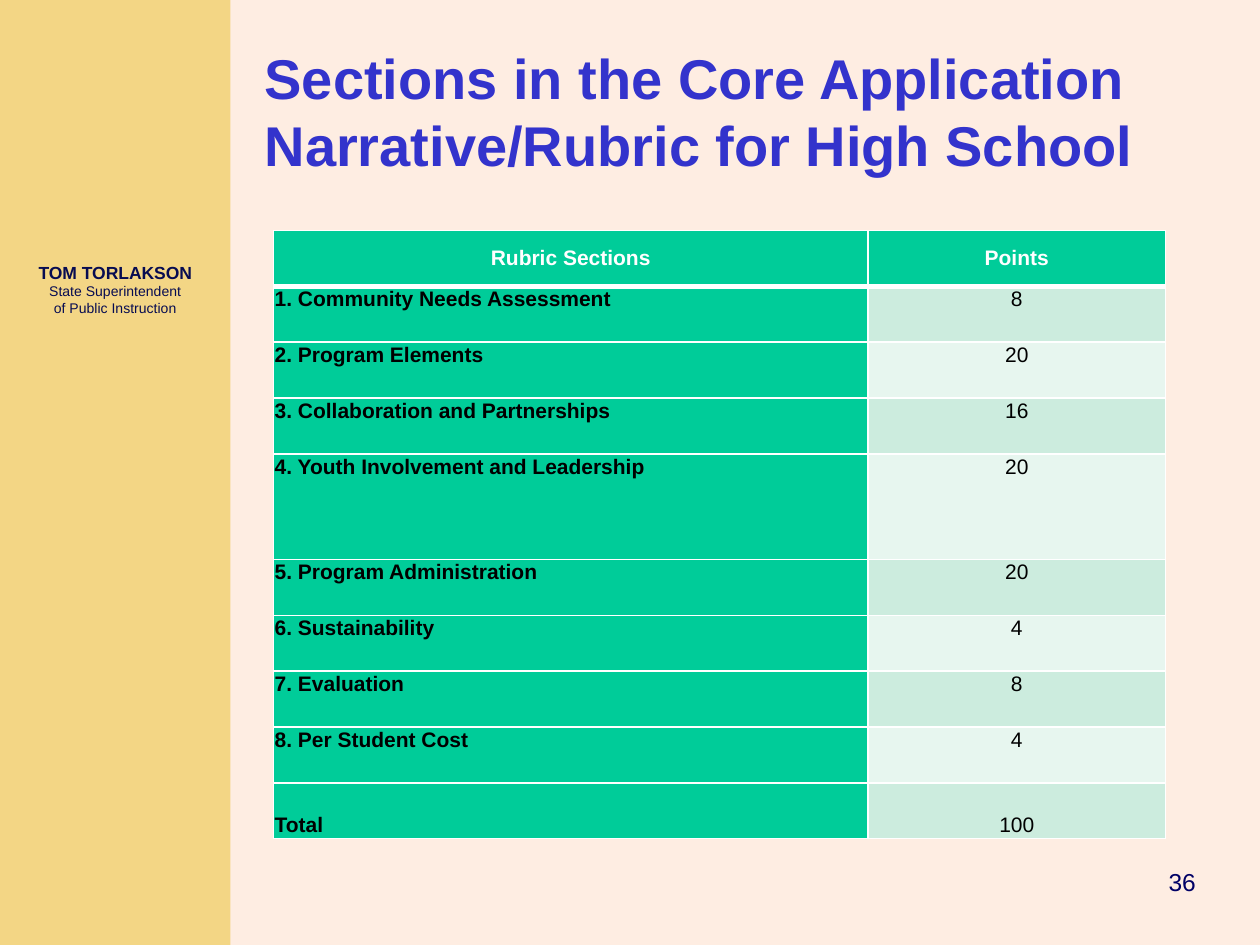
from dataclasses import dataclass

from lxml.etree import SubElement
from pptx import Presentation
from pptx.dml.color import RGBColor
from pptx.enum.shapes import MSO_SHAPE
from pptx.enum.text import MSO_ANCHOR as Anchor, MSO_AUTO_SIZE as Fit, PP_ALIGN as Align
from pptx.oxml.ns import qn
from pptx.util import Inches, Pt

HUES = {
    "page": "FEEDE2", "band": "F3D685", "navy": "070C51", "number": "000066",
    "title": "3333CC", "green": "00CC99", "odd": "CCECDE", "even": "E7F6EF",
    "white": "FFFFFF", "black": "000000",
}
FONT = "Arial"
ROW, TALL = 0.443, 0.84
WIDTHS = (4.72, 2.36)


@dataclass
class Box:
    left: float
    top: float
    width: float
    height: float

    def dims(self) -> tuple:
        return tuple(map(Inches, (self.left, self.top, self.width, self.height)))


@dataclass
class Entry:
    name: str
    points: str
    height: float = ROW
    anchor: Anchor = Anchor.TOP


ENTRIES = [
    Entry("Rubric Sections", "Points", anchor=Anchor.MIDDLE),
    Entry("1. Community Needs Assessment", "8"),
    Entry("2. Program Elements", "20"),
    Entry("3. Collaboration and Partnerships", "16"),
    Entry("4. Youth Involvement and Leadership", "20", TALL),
    Entry("5. Program Administration", "20"),
    Entry("6. Sustainability", "4"),
    Entry("7. Evaluation", "8"),
    Entry("8. Per Student Cost", "4"),
    Entry("Total", "100", anchor=Anchor.BOTTOM),
]


def tint(key: str) -> RGBColor:
    return RGBColor.from_string(HUES[key])


def add_run(para, text: str, size: float, hue: str, bold: bool = False) -> None:
    run = para.add_run()
    run.text = text
    font = run.font
    font.name, font.size, font.bold = FONT, Pt(size), bold
    font.color.rgb = tint(hue)


def add_panel(slide, box: Box, hue: str) -> None:
    panel = slide.shapes.add_shape(MSO_SHAPE.RECTANGLE, *box.dims())
    panel.shadow.inherit = False
    panel.fill.solid()
    panel.fill.fore_color.rgb = tint(hue)
    panel.line.fill.background()


def add_text(slide, box: Box, align: Align, anchor: Anchor = Anchor.TOP):
    """Add an empty text box and return its first paragraph."""
    frame = slide.shapes.add_textbox(*box.dims()).text_frame
    frame.word_wrap = True
    frame.vertical_anchor = anchor
    para = frame.paragraphs[0]
    para.alignment = align
    return para


def add_edges(cell, top: float, bottom: float) -> None:
    """Draw white cell borders; side borders are one point wide."""
    props = cell._tc.get_or_add_tcPr()
    sides = {"L": 1, "R": 1, "T": top, "B": bottom}
    for spot, (side, width) in enumerate(sides.items()):
        line = SubElement(props, qn(f"a:ln{side}"), w=str(Pt(width)))
        fill = SubElement(line, qn("a:solidFill"))
        SubElement(fill, qn("a:srgbClr"), val=HUES["white"])
        props.insert(spot, line)


def fill_cell(cell, entry: Entry, row: int, col: int) -> None:
    head, label = row == 0, col == 0
    cell.margin_left = cell.margin_right = Inches(0.01)
    cell.margin_top = cell.margin_bottom = Inches(0.01)
    cell.vertical_anchor = entry.anchor
    cell.fill.solid()
    shade = "odd" if row % 2 else "even"
    cell.fill.fore_color.rgb = tint("green" if head or label else shade)
    add_edges(cell, 3 if row == 1 else 1, 3 if head else 1)
    para = cell.text_frame.paragraphs[0]
    para.alignment = Align.LEFT if label and not head else Align.CENTER
    add_run(para, entry.name if label else entry.points, 12,
            "white" if head else "black", head or label)


def add_rubric(slide, left: float, top: float) -> None:
    box = Box(left, top, sum(WIDTHS), sum(entry.height for entry in ENTRIES))
    table = slide.shapes.add_table(len(ENTRIES), len(WIDTHS), *box.dims()).table
    for col, width in enumerate(WIDTHS):
        table.columns[col].width = Inches(width)
    for row, entry in enumerate(ENTRIES):
        table.rows[row].height = Inches(entry.height)
        for col in range(len(WIDTHS)):
            fill_cell(table.cell(row, col), entry, row, col)


def set_title(slide, box: Box, text: str) -> None:
    title = slide.shapes.title
    title.left, title.top, title.width, title.height = box.dims()
    frame = title.text_frame
    frame.auto_size = Fit.NONE
    frame.word_wrap = True
    frame.vertical_anchor = Anchor.MIDDLE
    para = frame.paragraphs[0]
    para.alignment = Align.LEFT
    add_run(para, text, 32, "title", True)


def main() -> None:
    deck = Presentation()
    deck.slide_width, deck.slide_height = Inches(10), Inches(7.5)
    slide = deck.slides.add_slide(deck.slide_layouts[5])
    back = slide.background.fill
    back.solid()
    back.fore_color.rgb = tint("page")

    add_panel(slide, Box(0, 0, 1.83, 7.5), "band")
    para = add_text(slide, Box(0.08, 1.92, 1.67, 0.75), Align.CENTER, Anchor.MIDDLE)
    add_run(para, "TOM TORLAKSON", 10, "navy", True)
    for line in ("State Superintendent", "of Public Instruction"):
        para.add_line_break()
        add_run(para, line, 8, "navy")

    set_title(slide, Box(2, 0.25, 7.58, 1.25),
              "Sections in the Core Application Narrative/Rubric for High School")
    add_rubric(slide, 2.17, 1.83)
    para = add_text(slide, Box(7.76, 6.83, 1.83, 0.5), Align.RIGHT)
    add_run(para, "36", 14, "number")
    deck.save("out.pptx")


if __name__ == "__main__":
    main()
